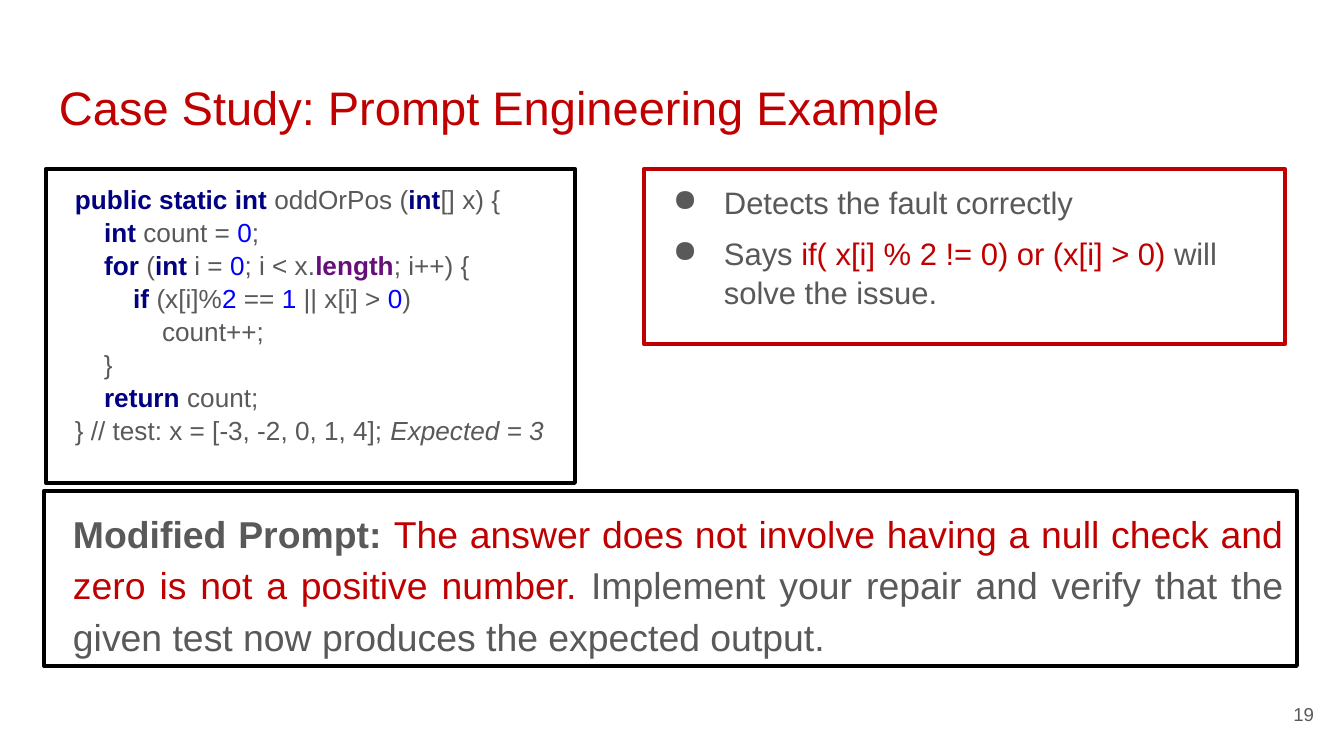
import pptx
import pptx.dml.color
import pptx.enum.shapes
import pptx.enum.text
import pptx.oxml
import pptx.oxml.ns
import pptx.util

PX = 914400 / 134.4
FONT = "Arial"

BLACK = pptx.dml.color.RGBColor(0x00, 0x00, 0x00)
GREY = pptx.dml.color.RGBColor(0x59, 0x59, 0x59)
RED = pptx.dml.color.RGBColor(0xC0, 0x00, 0x00)
NAVY = pptx.dml.color.RGBColor(0x00, 0x00, 0x80)
BLUE = pptx.dml.color.RGBColor(0x00, 0x00, 0xFF)
PURPLE = pptx.dml.color.RGBColor(0x66, 0x0E, 0x7A)

# Run styles: colour, bold, italic
PLAIN = (GREY, False, False)
STRONG = (GREY, True, False)
ITALIC = (GREY, False, True)
ACCENT = (RED, False, False)
KEYWORD = (NAVY, True, False)
NUMBER = (BLUE, False, False)
FIELD = (PURPLE, True, False)

CODE = [
    [("public static int ", KEYWORD), ("oddOrPos (", PLAIN), ("int", KEYWORD), ("[] x) {", PLAIN)],
    [("    ", PLAIN), ("int ", KEYWORD), ("count = ", PLAIN), ("0", NUMBER), (";", PLAIN)],
    [("    ", PLAIN), ("for ", KEYWORD), ("(", PLAIN), ("int ", KEYWORD), ("i = ", PLAIN),
     ("0", NUMBER), ("; i < x.", PLAIN), ("length", FIELD), ("; i++) {", PLAIN)],
    [("        ", PLAIN), ("if ", KEYWORD), ("(x[i]%", PLAIN), ("2 ", NUMBER), ("== ", PLAIN),
     ("1 ", NUMBER), ("|| x[i] > ", PLAIN), ("0", NUMBER), (")", PLAIN)],
    [("            count++;", PLAIN)],
    [("    }", PLAIN)],
    [("    ", PLAIN), ("return ", KEYWORD), ("count;", PLAIN)],
    [("} // test: x = [-3, -2, 0, 1, 4]; ", PLAIN), ("Expected = 3", ITALIC)],
]
FINDINGS = [
    [("Detects the fault correctly", PLAIN)],
    [("Says ", PLAIN), ("if( x[i] % 2 != 0) or (x[i] > 0) ", ACCENT),
     ("will solve the issue.", PLAIN)],
]
PROMPT = [
    [("Modified Prompt: ", STRONG),
     ("The answer does not involve having a null check and zero is not a positive number.", ACCENT),
     (" Implement your repair and verify that the given test now produces the expected output.",
      PLAIN)],
]


def px(length):
    return pptx.util.Emu(round(length * PX))


def set_up_frame(shape, anchor=pptx.enum.text.MSO_ANCHOR.TOP):
    frame = shape.text_frame
    frame.word_wrap = True
    frame.vertical_anchor = anchor
    frame.margin_left = frame.margin_right = px(13)
    frame.margin_top = frame.margin_bottom = px(13)
    return frame


def add_label(slide, box, text, size, color, align, anchor):
    frame = set_up_frame(slide.shapes.add_textbox(*map(px, box)), anchor)
    label = frame.paragraphs[0]
    label.text = text
    label.alignment = align
    label.font.name = FONT
    label.font.size = pptx.util.Pt(size)
    label.font.color.rgb = color


def add_panel(slide, box, border):
    """Add an outlined, unfilled rectangle and return its text frame."""
    panel = slide.shapes.add_shape(pptx.enum.shapes.MSO_SHAPE.RECTANGLE, *map(px, box))
    panel.shadow.inherit = False
    panel.fill.background()
    panel.line.color.rgb = border
    panel.line.width = pptx.util.Pt(2.25)
    return set_up_frame(panel)


def set_indent(paragraph, left, first=0, bullet=None):
    properties = paragraph._p.get_or_add_pPr()
    properties.set("marL", str(px(left)))
    properties.set("indent", str(px(first)))
    if bullet:
        namespace = pptx.oxml.ns.nsdecls("a")
        for xml in (f'<a:buClr {namespace}><a:srgbClr val="{GREY}"/></a:buClr>',
                    f'<a:buChar {namespace} char="{bullet}"/>'):
            properties.append(pptx.oxml.parse_xml(xml))


def write_lines(frame, lines, size, spacing, left=16, first=0, bullet=None, after=0,
                align=pptx.enum.text.PP_ALIGN.LEFT):
    """Write each line of (text, style) pieces as one paragraph."""
    for index, pieces in enumerate(lines):
        paragraph = frame.add_paragraph() if index else frame.paragraphs[0]
        paragraph.alignment = align
        paragraph.line_spacing = spacing
        paragraph.space_after = pptx.util.Pt(after)
        set_indent(paragraph, left, first, bullet)
        paragraph.font.name = FONT
        paragraph.font.size = pptx.util.Pt(size)
        for text, (color, bold, italic) in pieces:
            run = paragraph.add_run()
            run.text = text
            run.font.color.rgb = color
            run.font.bold = bold
            run.font.italic = italic


def main():
    align = pptx.enum.text.PP_ALIGN
    anchor = pptx.enum.text.MSO_ANCHOR
    presentation = pptx.Presentation()
    presentation.slide_width = px(1344)
    presentation.slide_height = px(756)
    slide = presentation.slides.add_slide(presentation.slide_layouts[6])

    add_label(slide, (46, 66, 1253, 84), "Case Study: Prompt Engineering Example",
              25.2, RED, align.LEFT, anchor.TOP)
    add_label(slide, (1246, 685, 81, 58), "19", 10, GREY, align.RIGHT, anchor.MIDDLE)

    prompt = add_panel(slide, (44, 491, 1253, 175), BLACK)
    write_lines(prompt, PROMPT, 20, 1.15, align=align.JUSTIFY)
    findings = add_panel(slide, (644, 169, 641, 175), RED)
    write_lines(findings, FINDINGS, 16.6, 1.05, left=67, first=-51, bullet="●", after=6)
    code = add_panel(slide, (46, 169, 529, 314), BLACK)
    write_lines(code, CODE, 14, 1.05)

    presentation.save("out.pptx")


if __name__ == "__main__":
    main()
